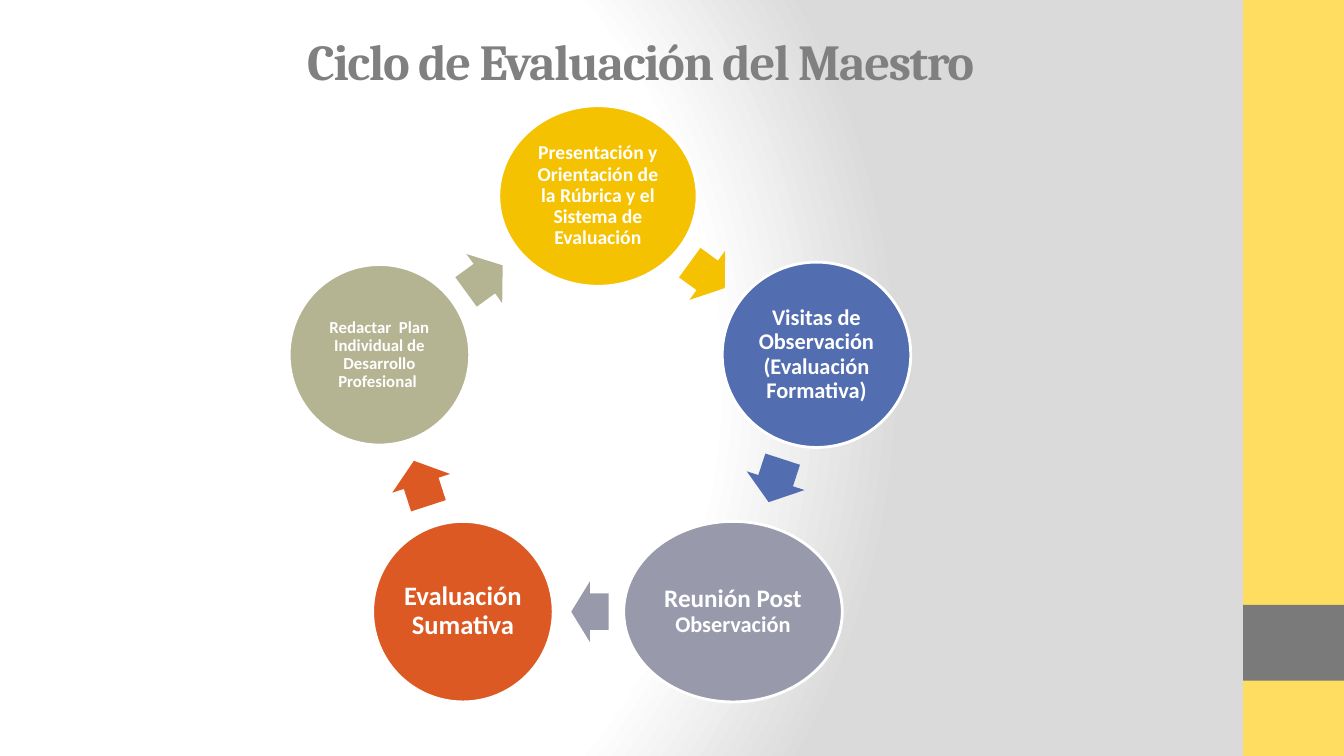
from dataclasses import dataclass
from math import cos, radians, sin

from lxml.etree import SubElement
from pptx import Presentation
from pptx.dml.color import RGBColor
from pptx.enum.shapes import MSO_SHAPE
from pptx.enum.text import MSO_ANCHOR, MSO_AUTO_SIZE, PP_ALIGN
from pptx.oxml.ns import qn
from pptx.util import Cm, Pt


@dataclass(frozen=True)
class Theme:
    white: str = "FFFFFF"
    backdrop: str = "DADADA"
    band: str = "FEDD61"
    band_block: str = "7A7A7A"
    title: str = "808080"
    yellow: str = "F5C201"
    blue: str = "526DB0"
    grey: str = "989AAC"
    orange: str = "DC5924"
    olive: str = "B4B392"
    title_font: str = "Cambria"
    body_font: str = "Calibri"
    title_size: int = 36
    huge: int = 19
    large: int = 18
    medium: int = 16
    small: int = 14
    tiny: int = 12


T = Theme()

# Cycle geometry, in centimetres and degrees
CENTER_X, CENTER_Y, RADIUS = 15.07, 10.73, 5.79
ARROW_HEIGHT = 1.53

# Per step: colour, ellipse width and height, text runs,
# arrow length, arrow position along the way to the next step
STEPS = [
    (T.yellow, 5.0, 4.55,
     [("Presentación y Orientación de la Rúbrica y el Sistema de Evaluación", T.small)],
     1.09, 0.5),
    (T.blue, 4.75, 4.67,
     [("Visitas de Observación", T.medium), (" ", T.small),
      ("(Evaluación Formativa)", T.medium)],
     1.14, 0.49),
    (T.grey, 5.51, 4.55,
     [("Reunión Post ", T.large), ("Observación", T.medium)],
     0.94, 0.53),
    (T.orange, 4.55, 4.55, [("Evaluación Sumativa", T.huge)], 1.19, 0.5),
    (T.olive, 4.55, 4.55,
     [("Redactar  Plan Individual de Desarrollo Profesional ", T.tiny)],
     1.14, 0.48),
]


def set_font(font, name, color):
    font.name = name
    font.bold = True
    font.color.rgb = RGBColor.from_string(color)


def add_filled(s, kind, left, top, width, height, color):
    sp = s.shapes.add_shape(kind, Cm(left), Cm(top), Cm(width), Cm(height))
    sp.shadow.inherit = False
    sp.fill.solid()
    sp.fill.fore_color.rgb = RGBColor.from_string(color)
    sp.line.fill.background()
    return sp


def set_background(s):
    fill = s.background.fill
    fill.gradient()
    grad = s.background._cSld.bg.bgPr.find(qn("a:gradFill"))
    for child in list(grad):
        grad.remove(child)
    stops = SubElement(grad, qn("a:gsLst"))
    for percent, color in ((0, T.white), (75, T.white), (100, T.backdrop)):
        stop = SubElement(stops, qn("a:gs"), pos=str(percent * 1000))
        SubElement(stop, qn("a:srgbClr"), val=color)
    circle = SubElement(grad, qn("a:path"), path="circle")
    SubElement(circle, qn("a:fillToRect"), l="20000", t="50000", r="100000", b="50000")


def set_title(s, text):
    sp = s.shapes.title
    sp.left, sp.top, sp.width, sp.height = Cm(2.62), Cm(0.61), Cm(27.05), Cm(1.8)
    tf = sp.text_frame
    tf.text = text
    tf.vertical_anchor = MSO_ANCHOR.MIDDLE
    tf.auto_size = MSO_AUTO_SIZE.SHAPE_TO_FIT_TEXT
    p = tf.paragraphs[0]
    p.alignment = PP_ALIGN.CENTER
    set_font(p.font, T.title_font, T.title)
    p.font.size = Pt(T.title_size)
    p.runs[0]._r.get_or_add_rPr().set("spc", "-100")


def step_center(index):
    angle = radians(360 / len(STEPS) * index)
    return CENTER_X + RADIUS * sin(angle), CENTER_Y - RADIUS * cos(angle)


def add_step(s, index, color, width, height, runs):
    x, y = step_center(index)
    sp = add_filled(s, MSO_SHAPE.OVAL, x - width / 2, y - height / 2, width, height, color)
    sp.line.color.rgb = RGBColor.from_string(T.white)
    sp.line.width = Pt(2)
    tf = sp.text_frame
    tf.word_wrap = True
    tf.vertical_anchor = MSO_ANCHOR.MIDDLE
    tf.margin_left = tf.margin_right = tf.margin_top = tf.margin_bottom = Cm(0.06)
    p = tf.paragraphs[0]
    p.alignment = PP_ALIGN.CENTER
    p.line_spacing = 0.9
    set_font(p.font, T.body_font, T.white)
    for text, size in runs:
        r = p.add_run()
        r.text = text
        r.font.size = Pt(size)


def add_arrow(s, index, color, length, position):
    x1, y1 = step_center(index)
    x2, y2 = step_center(index + 1)
    x, y = x1 + (x2 - x1) * position, y1 + (y2 - y1) * position
    sp = add_filled(s, MSO_SHAPE.RIGHT_ARROW, x - length / 2, y - ARROW_HEIGHT / 2,
                    length, ARROW_HEIGHT, color)
    sp.adjustments[0], sp.adjustments[1] = 0.6, 0.5
    sp.rotation = 360 / len(STEPS) * (index + 0.5)


def main():
    prs = Presentation()
    prs.slide_width, prs.slide_height = Cm(33.87), Cm(19.05)
    s = prs.slides.add_slide(prs.slide_layouts[5])
    set_background(s)

    # Side band
    add_filled(s, MSO_SHAPE.RECTANGLE, 31.33, 0, 2.54, 19.05, T.band)
    add_filled(s, MSO_SHAPE.RECTANGLE, 31.33, 15.24, 2.54, 1.91, T.band_block)

    set_title(s, "Ciclo de Evaluación del Maestro")

    # Evaluation cycle
    for index, (color, width, height, runs, length, position) in enumerate(STEPS):
        add_step(s, index, color, width, height, runs)
        add_arrow(s, index, color, length, position)

    prs.save("out.pptx")


if __name__ == "__main__":
    main()
